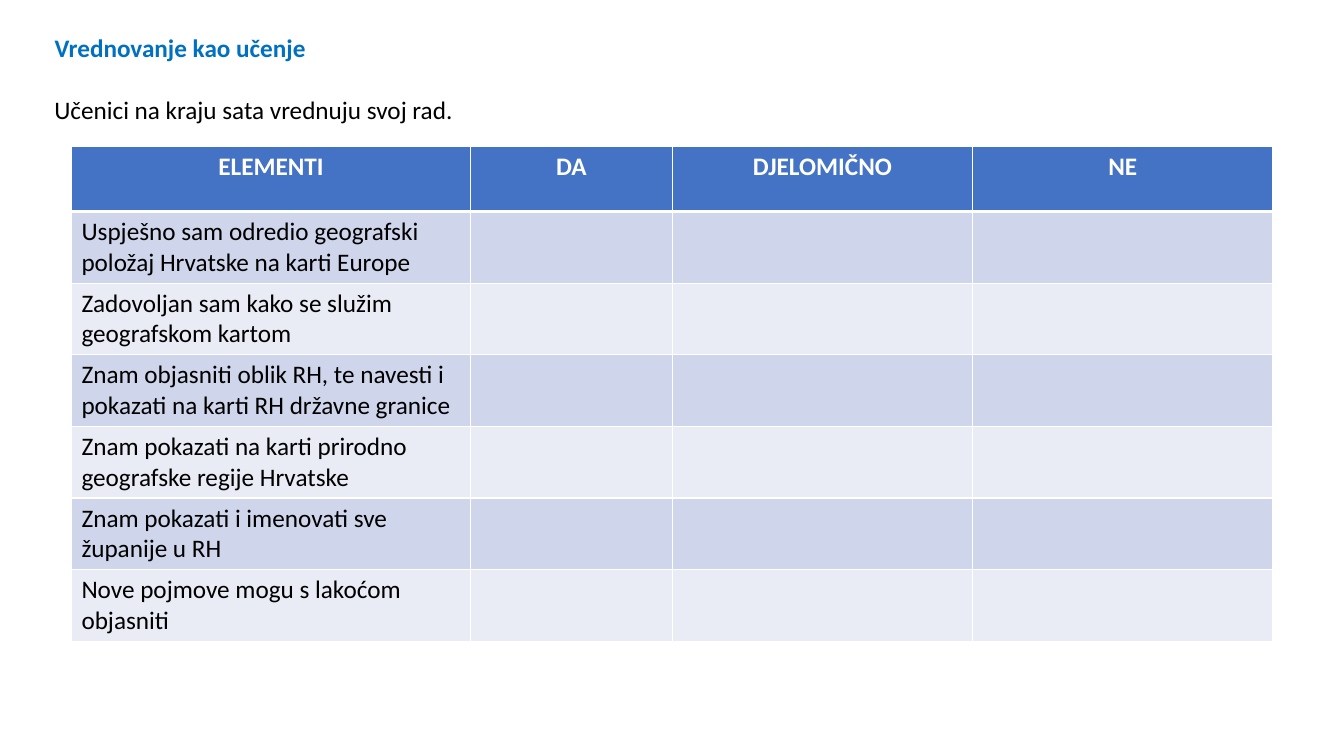
from lxml import etree
from pptx import Presentation
from pptx import util as u
from pptx.dml.color import RGBColor
from pptx.enum import text
from pptx.oxml.ns import qn

BLUE = RGBColor(0x00, 0x70, 0xC0)
BLACK = RGBColor(0x00, 0x00, 0x00)
WHITE = RGBColor(0xFF, 0xFF, 0xFF)
HEADER_FILL = RGBColor(0x44, 0x72, 0xC4)
BAND_FILLS = (RGBColor(0xCF, 0xD5, 0xEA), RGBColor(0xE9, 0xEB, 0xF5))

HEADINGS = ("ELEMENTI", "DA", "DJELOMIČNO", "NE")
STATEMENTS = (
    "Uspješno sam odredio geografski položaj Hrvatske na karti Europe",
    "Zadovoljan sam kako se služim geografskom kartom",
    "Znam objasniti oblik RH, te navesti i pokazati na karti RH državne granice",
    "Znam pokazati na karti prirodno geografske regije Hrvatske",
    "Znam pokazati i imenovati sve županije u RH",
    "Nove pojmove mogu s lakoćom objasniti",
)
COLUMN_WIDTHS = (10.06, 5.08, 7.57, 7.57)
HEADER_HEIGHT = 1.65
ROW_HEIGHT = 1.78
LINE_LEFT = 1.12
LINE_SIZE = (10.64, 1.02)


def write(frame, content, color, bold=False, align=text.PP_ALIGN.LEFT):
    paragraph = frame.paragraphs[0]
    paragraph.alignment = align
    run = paragraph.add_run()
    run.text = content
    run.font.name = "Calibri"
    run.font.size = u.Pt(18)
    run.font.bold = bold
    run.font.color.rgb = color


def place_line(shape, top, content, color, bold=False):
    shape.left, shape.top = u.Cm(LINE_LEFT), u.Cm(top)
    shape.width, shape.height = (u.Cm(side) for side in LINE_SIZE)
    frame = shape.text_frame
    frame.word_wrap = False
    frame.auto_size = text.MSO_AUTO_SIZE.NONE
    frame.vertical_anchor = text.MSO_ANCHOR.TOP
    write(frame, content, color, bold)


def add_border(cell, side, points):
    properties = cell._tc.get_or_add_tcPr()
    line = etree.SubElement(properties, qn(f"a:ln{side}"), w=str(u.Pt(points)))
    fill = etree.SubElement(line, qn("a:solidFill"))
    etree.SubElement(fill, qn("a:srgbClr"), val=str(WHITE))


def format_cell(cell, row):
    for side in "LRTB":
        heavy = (row, side) in ((0, "B"), (1, "T"))
        add_border(cell, side, 3 if heavy else 1)
    cell.fill.solid()
    cell.fill.fore_color.rgb = BAND_FILLS[(row - 1) % 2] if row else HEADER_FILL


def add_evaluation_table(slide):
    height = HEADER_HEIGHT + ROW_HEIGHT * len(STATEMENTS)
    table = slide.shapes.add_table(
        len(STATEMENTS) + 1, len(HEADINGS),
        u.Cm(1.8), u.Cm(3.68), u.Cm(sum(COLUMN_WIDTHS)), u.Cm(height),
    ).table
    for column, width in zip(table.columns, COLUMN_WIDTHS):
        column.width = u.Cm(width)
    for index, row in enumerate(table.rows):
        row.height = u.Cm(ROW_HEIGHT if index else HEADER_HEIGHT)
        for cell in row.cells:
            format_cell(cell, index)
    for column, heading in enumerate(HEADINGS):
        write(table.cell(0, column).text_frame, heading, WHITE, True,
              text.PP_ALIGN.CENTER)
    for row, statement in enumerate(STATEMENTS, 1):
        write(table.cell(row, 0).text_frame, statement, BLACK)


def main():
    presentation = Presentation()
    presentation.slide_width = u.Cm(33.87)
    presentation.slide_height = u.Cm(19.05)
    slide = presentation.slides.add_slide(presentation.slide_layouts[5])
    place_line(slide.shapes.title, 0.69, "Vrednovanje kao učenje", BLUE, True)
    sentence = slide.shapes.add_textbox(0, 0, 0, 0)
    place_line(sentence, 2.24, "Učenici na kraju sata vrednuju svoj rad.", BLACK)
    add_evaluation_table(slide)
    presentation.save("out.pptx")


if __name__ == "__main__":
    main()
